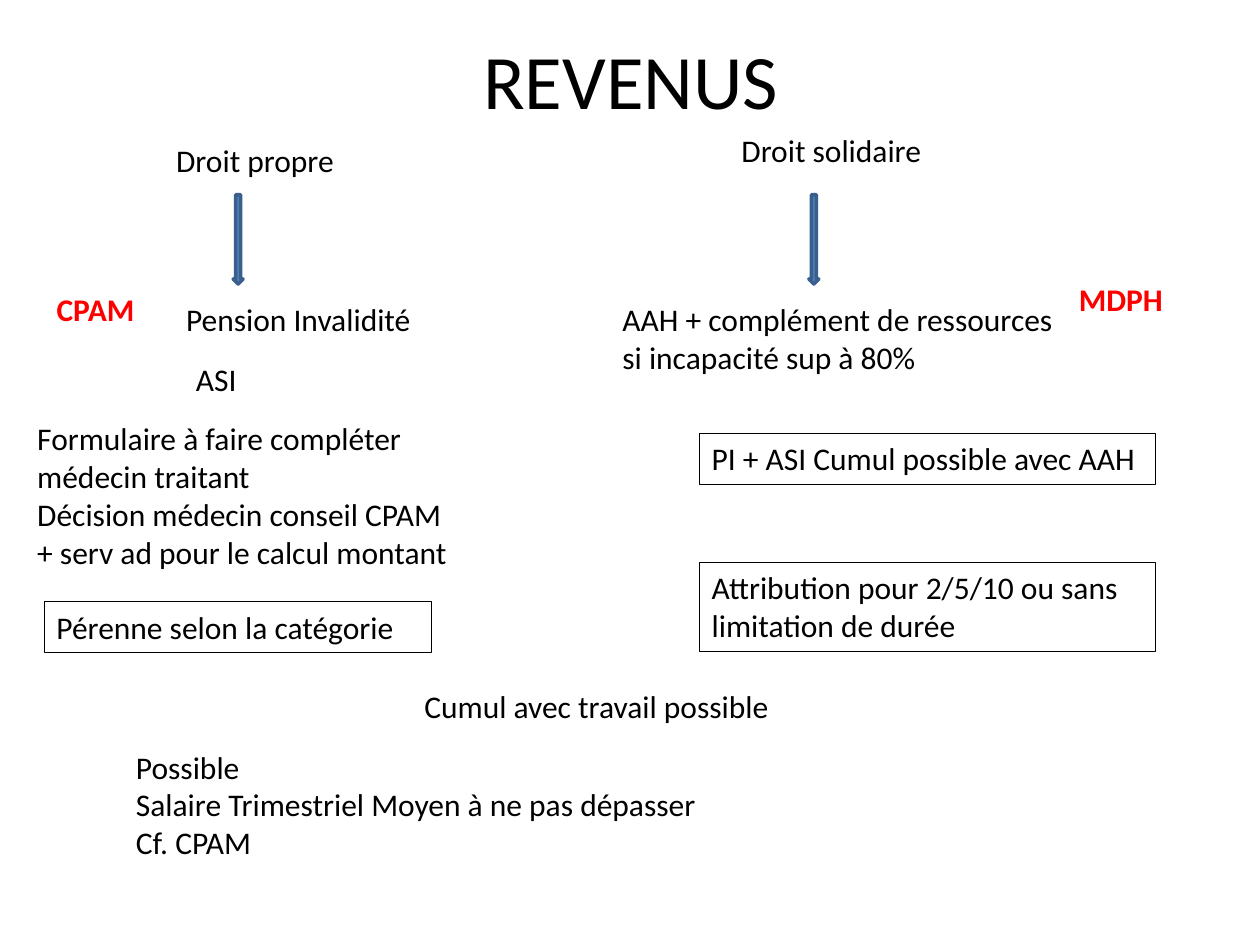
"""Builds the REVENUS slide comparing own and solidarity income rights."""
import pptx
import pptx.dml.color
import pptx.enum.shapes
import pptx.enum.text
import pptx.util

Pt = pptx.util.Pt
Shapes = pptx.enum.shapes.MSO_SHAPE
Align = pptx.enum.text.PP_ALIGN
Anchor = pptx.enum.text.MSO_ANCHOR
AutoSize = pptx.enum.text.MSO_AUTO_SIZE


def color(value):
    return pptx.dml.color.RGBColor.from_string(value)


class SlideBuilder:
    font = "Calibri"
    black = "000000"
    red = "FF0000"
    arrow_fill = "4F81BD"
    arrow_line = "3A5F8C"
    body_size = 18
    title_size = 44

    def __init__(self, page):
        self.page = page

    def add_text(self, para, text, size=body_size, ink=black, bold=False):
        for index, line in enumerate(text.split("\n")):
            if index:
                para.add_line_break()
            span = para.add_run()
            span.text = line
            span.font.name = self.font
            span.font.size = Pt(size)
            span.font.bold = bold
            span.font.color.rgb = color(ink)

    def fill_frame(self, box, paragraphs, **style):
        frame = box.text_frame
        frame.word_wrap = True
        frame.auto_size = AutoSize.SHAPE_TO_FIT_TEXT
        frame.vertical_anchor = Anchor.TOP
        for index, text in enumerate(paragraphs):
            para = frame.add_paragraph() if index else frame.paragraphs[0]
            para.alignment = Align.LEFT
            self.add_text(para, text, **style)

    def title(self, text, left, top, width, height):
        box = self.page.shapes.title
        box.left, box.top, box.width, box.height = map(Pt, (left, top, width, height))
        box.text_frame.vertical_anchor = Anchor.MIDDLE
        para = box.text_frame.paragraphs[0]
        para.alignment = Align.CENTER
        self.add_text(para, text, size=self.title_size)

    def label(self, left, top, width, height, *paragraphs, **style):
        box = self.page.shapes.add_textbox(*map(Pt, (left, top, width, height)))
        self.fill_frame(box, paragraphs, **style)

    def shape(self, kind, left, top, width, height, line, weight):
        box = self.page.shapes.add_shape(kind, *map(Pt, (left, top, width, height)))
        box.shadow.inherit = False
        box.line.color.rgb = color(line)
        box.line.width = Pt(weight)
        return box

    def framed(self, left, top, width, height, text):
        box = self.shape(Shapes.RECTANGLE, left, top, width, height, self.black, 0.25)
        box.fill.background()
        self.fill_frame(box, [text])

    def down_arrow(self, left, top, width, height):
        box = self.shape(Shapes.DOWN_ARROW, left, top, width, height, self.arrow_line, 2)
        box.fill.solid()
        box.fill.fore_color.rgb = color(self.arrow_fill)


def main():
    deck = pptx.Presentation()
    deck.slide_width, deck.slide_height = Pt(720), Pt(540)
    builder = SlideBuilder(deck.slides.add_slide(deck.slide_layouts[5]))
    one_line, two_lines = 29, 51
    right_left, right_width = 399.6, 260.8

    builder.title("REVENUS", 36.5, 0, 648, 90)

    builder.label(93.6, 77.2, 108, one_line, "Droit propre")
    builder.label(416.6, 71.5, 158.4, one_line, "Droit solidaire")
    builder.label(25.2, 162.2, 118.8, one_line, "CPAM", ink=builder.red, bold=True)
    builder.label(609.4, 156.6, 79.2, one_line, "MDPH", ink=builder.red, bold=True)
    builder.label(99.2, 167.9, 181.4, one_line, "Pension Invalidité")
    builder.label(348.6, 167.9, right_width, two_lines,
                  "AAH + complément de ressources si incapacité sup à 80%")
    builder.label(104.9, 202.2, 153.4, one_line, "ASI")
    builder.label(14.2, 236, 249.1, 94.5,
                  "Formulaire à faire compléter médecin traitant",
                  "Décision médecin conseil CPAM + serv ad pour le calcul montant")

    builder.framed(right_left, 247.5, right_width, one_line,
                   "PI + ASI Cumul possible avec AAH")
    builder.framed(25.2, 343.8, 221, one_line, "Pérenne selon la catégorie")
    builder.framed(right_left, 321.3, right_width, two_lines,
                   "Attribution pour 2/5/10 ou sans limitation de durée")

    builder.label(235.4, 389, 226.8, one_line, "Cumul avec travail possible")
    for left in (133.2, 462.2):
        builder.down_arrow(left, 111.3, 5.7, 51)
    builder.label(70.6, 423.6, 362.9, 72.7,
                  "Possible \nSalaire Trimestriel Moyen à ne pas dépasser\nCf. CPAM")

    deck.save("out.pptx")


if __name__ == "__main__":
    main()
